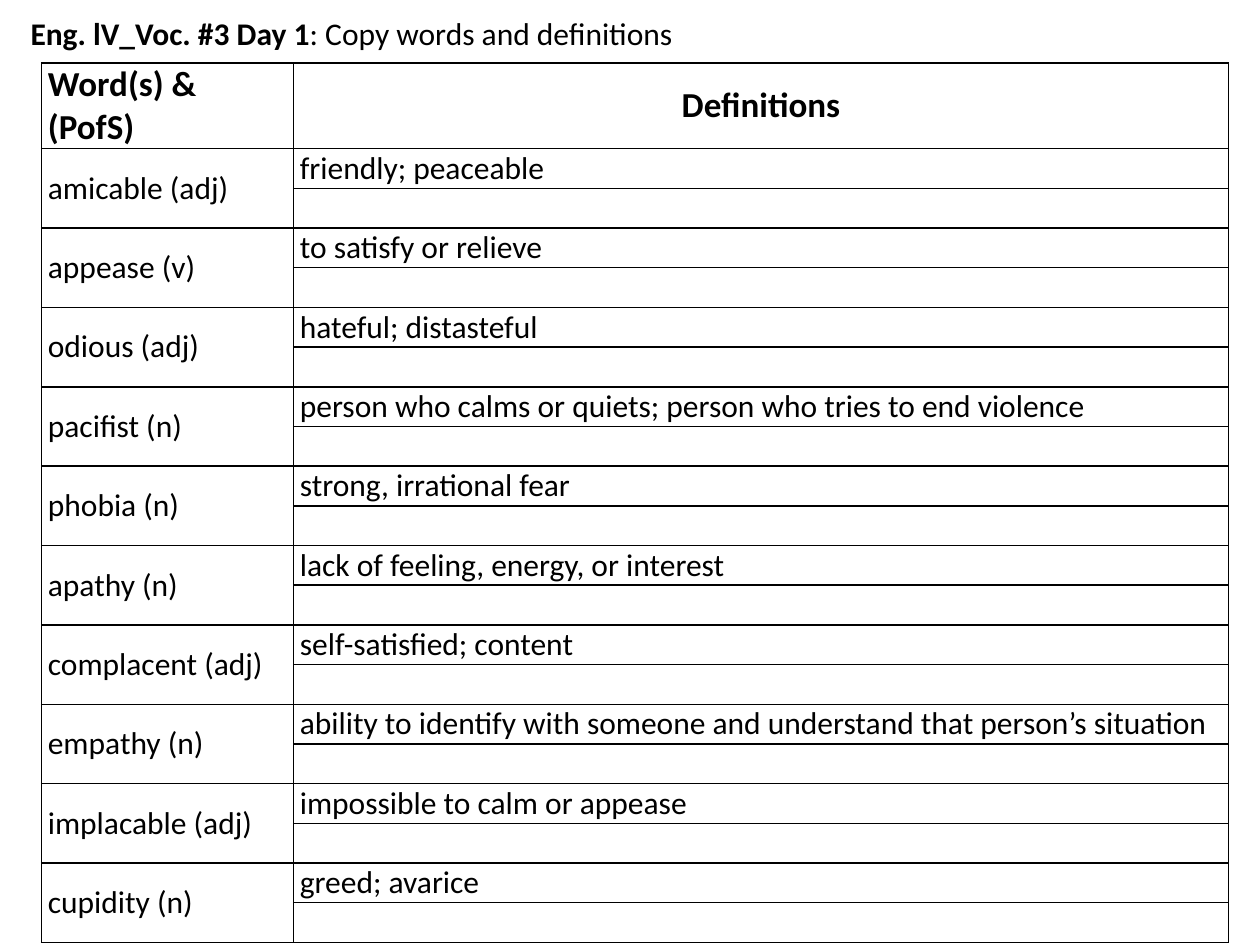
import pptx
import pptx.dml.color
import pptx.enum.text
import pptx.oxml
import pptx.oxml.ns
import pptx.util
from pptx.util import Inches

COLORS = {"text": "000000", "border": "000000"}
ALIGN = pptx.enum.text.PP_ALIGN
MIDDLE = pptx.enum.text.MSO_ANCHOR.MIDDLE

HEADINGS = ("Word(s) & (PofS)", "Definitions")
VOCABULARY = [
    ("amicable (adj)", "friendly; peaceable"),
    ("appease (v)", "to satisfy or relieve"),
    ("odious (adj)", "hateful; distasteful"),
    ("pacifist (n)", "person who calms or quiets; person who tries to end violence"),
    ("phobia (n)", "strong, irrational fear"),
    ("apathy (n)", "lack of feeling, energy, or interest"),
    ("complacent (adj)", "self-satisfied; content"),
    ("empathy (n)", "ability to identify with someone and understand that person’s situation"),
    ("implacable (adj)", "impossible to calm or appease"),
    ("cupidity (n)", "greed; avarice"),
]


def add_text(para, text, font="Calibri", size=18, bold=False, color="text", align=ALIGN.LEFT):
    para.alignment = align
    span = para.add_run()
    span.text = text
    span.font.name = font
    span.font.size = pptx.util.Pt(size)
    span.font.bold = bold
    span.font.color.rgb = pptx.dml.color.RGBColor.from_string(COLORS[color])


class VocabularySlide:
    """Holds the slide being built and its table style."""

    border_width = pptx.util.Pt(1)
    cell_inset = Inches(0.05)

    def __init__(self, deck):
        self.slide = deck.slides.add_slide(deck.slide_layouts[6])

    def title(self, lead, rest, left, top, width, height):
        box = self.slide.shapes.add_textbox(left, top, width, height)
        frame = box.text_frame
        frame.word_wrap = True
        frame.vertical_anchor = MIDDLE
        para = frame.paragraphs[0]
        add_text(para, lead, bold=True, align=ALIGN.CENTER)
        add_text(para, rest, align=ALIGN.CENTER)

    def style_cell(self, cell):
        cell.margin_left = cell.margin_right = self.cell_inset
        cell.margin_top = cell.margin_bottom = 0
        cell.vertical_anchor = MIDDLE
        properties = cell._tc.get_or_add_tcPr()
        for side in ("lnL", "lnR", "lnT", "lnB"):
            properties.append(pptx.oxml.parse_xml(
                f'<a:{side} {pptx.oxml.ns.nsdecls("a")} w="{self.border_width}">'
                f'<a:solidFill><a:srgbClr val="{COLORS["border"]}"/></a:solidFill>'
                f'</a:{side}>'))
        cell.fill.background()

    def word_table(self, left, top, column_widths, header_height, height):
        """Give each word two rows: its definition and an empty line."""
        row_count = 1 + 2 * len(VOCABULARY)
        table = self.slide.shapes.add_table(
            row_count, len(column_widths), left, top, sum(column_widths), height).table
        table.first_row = table.horz_banding = False
        for column, width in zip(table.columns, column_widths):
            column.width = width
        line_height = (height - header_height) // (row_count - 1)
        for index, row in enumerate(table.rows):
            row.height = line_height if index else header_height
        for cell in table.iter_cells():
            self.style_cell(cell)

        for column, (heading, align) in enumerate(zip(HEADINGS, (ALIGN.LEFT, ALIGN.CENTER))):
            para = table.cell(0, column).text_frame.paragraphs[0]
            add_text(para, heading, size=20, bold=True, align=align)
        for index, entry in enumerate(VOCABULARY):
            row = 1 + 2 * index
            table.cell(row, 0).merge(table.cell(row + 1, 0))
            for column, text in enumerate(entry):
                add_text(table.cell(row, column).text_frame.paragraphs[0], text)


def main():
    deck = pptx.Presentation()
    deck.slide_width, deck.slide_height = Inches(10), Inches(7.5)
    page = VocabularySlide(deck)
    page.title("Eng. lV_Voc. #3 Day 1", ": Copy words and definitions",
               0, 0, Inches(5.58), Inches(0.53))
    page.word_table(Inches(0.33), Inches(0.5), (Inches(2), Inches(7.42)),
                    header_height=Inches(0.68), height=Inches(6.98))
    deck.save("out.pptx")


if __name__ == "__main__":
    main()
